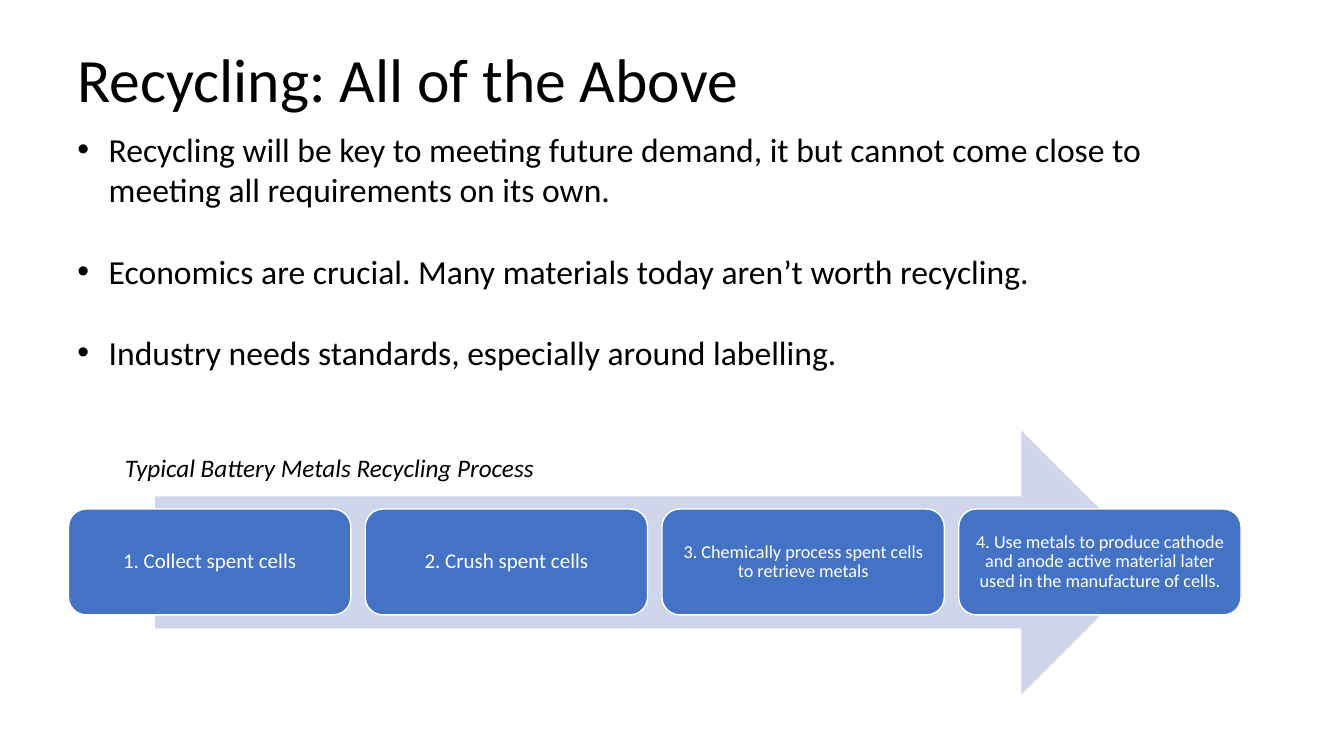
from dataclasses import dataclass

from lxml.etree import SubElement
from pptx import Presentation
from pptx.dml.color import RGBColor
from pptx.enum.shapes import MSO_SHAPE
from pptx.enum.text import MSO_ANCHOR, PP_ALIGN
from pptx.oxml.ns import qn
from pptx.shapes.autoshape import Shape
from pptx.slide import Slide
from pptx.text.text import TextFrame
from pptx.util import Inches, Pt


@dataclass(frozen=True)
class Theme:
    font: str = "Calibri"
    ink: str = "000000"
    paper: str = "FFFFFF"
    box: str = "4472C4"
    arrow: str = "CFD5EA"
    title: int = 44
    body: int = 24
    label: int = 18
    step: int = 15
    small: int = 13


@dataclass(frozen=True)
class Area:
    left: float
    top: float
    width: float
    height: float

    def lengths(self) -> list[Inches]:
        return [Inches(v) for v in (self.left, self.top, self.width, self.height)]


@dataclass(frozen=True)
class Step:
    text: str
    size: int


THEME = Theme()
TITLE = Area(0.67, 0.41, 11.65, 0.81)
BODY = Area(0.67, 1.23, 11.65, 2.52)
LABEL = Area(1.14, 4.44, 5.05, 0.4)
ARROW = Area(1.54, 4.27, 9.9, 2.62)
FIRST = Area(0.68, 5.05, 2.8, 1.05)
PITCH = 2.943
INDENT = 0.31

POINTS = [
    "Recycling will be key to meeting future demand, it but cannot come close to "
    "meeting all requirements on its own.",
    "Economics are crucial. Many materials today aren’t worth recycling.",
    "Industry needs standards, especially around labelling.",
]
STEPS = [
    Step("1. Collect spent cells", THEME.step),
    Step("2. Crush spent cells", THEME.step),
    Step("3. Chemically process spent cells to retrieve metals", THEME.small),
    Step("4. Use metals to produce cathode and anode active material later "
         "used in the manufacture of cells.", THEME.small),
]


def apply(target: object, values: dict[str, object]) -> None:
    for name, value in values.items():
        setattr(target, name, value)


def write(frame: TextFrame, lines: list[str], size: int, color: str = THEME.ink,
          italic: bool = False, form: dict[str, object] | None = None,
          bullet: bool = False) -> None:
    """Fill the frame with one paragraph per line, a blank line's height apart."""
    frame.word_wrap = True
    for i, line in enumerate(lines):
        para = frame.add_paragraph() if i else frame.paragraphs[0]
        apply(para, form or {})
        if i:
            para.space_before = Pt(1.22 * size)
        if bullet:
            props = para._p.get_or_add_pPr()
            props.set("marL", str(Inches(INDENT)))
            props.set("indent", str(-Inches(INDENT)))
            SubElement(props, qn("a:buFont")).set("typeface", "Arial")
            SubElement(props, qn("a:buChar")).set("char", "•")
        run = para.add_run()
        run.text = line
        apply(run.font, {"name": THEME.font, "size": Pt(size), "italic": italic})
        run.font.color.rgb = RGBColor.from_string(color)


def add_text(slide: Slide, area: Area) -> TextFrame:
    return slide.shapes.add_textbox(*area.lengths()).text_frame


def add_block(slide: Slide, kind: MSO_SHAPE, area: Area, fill: str) -> Shape:
    """Add a flat filled shape without an outline."""
    shape = slide.shapes.add_shape(kind, *area.lengths())
    shape.shadow.inherit = False
    shape.fill.solid()
    shape.fill.fore_color.rgb = RGBColor.from_string(fill)
    shape.line.fill.background()
    return shape


def add_step(slide: Slide, index: int, step: Step) -> None:
    area = Area(FIRST.left + index * PITCH, FIRST.top, FIRST.width, FIRST.height)
    box = add_block(slide, MSO_SHAPE.ROUNDED_RECTANGLE, area, THEME.box)
    box.line.color.rgb = RGBColor.from_string(THEME.paper)
    box.line.width = Pt(1)
    frame = box.text_frame
    sides = ("left", "right", "top", "bottom")
    apply(frame, {f"margin_{side}": Inches(0.1) for side in sides})
    frame.vertical_anchor = MSO_ANCHOR.MIDDLE
    write(frame, [step.text], step.size, THEME.paper,
          form={"alignment": PP_ALIGN.CENTER, "line_spacing": 0.9})


def main() -> None:
    deck = Presentation()
    apply(deck, {"slide_width": Inches(13.33), "slide_height": Inches(7.5)})
    slide = deck.slides.add_slide(deck.slide_layouts[6])

    title = add_text(slide, TITLE)
    title.vertical_anchor = MSO_ANCHOR.MIDDLE
    write(title, ["Recycling: All of the Above"], THEME.title,
          form={"line_spacing": 0.9})

    add_block(slide, MSO_SHAPE.RIGHT_ARROW, ARROW, THEME.arrow)
    for index, step in enumerate(STEPS):
        add_step(slide, index, step)

    write(add_text(slide, BODY), POINTS, THEME.body, bullet=True)
    write(add_text(slide, LABEL), ["Typical Battery Metals Recycling Process"],
          THEME.label, italic=True)
    deck.save("out.pptx")


if __name__ == "__main__":
    main()
